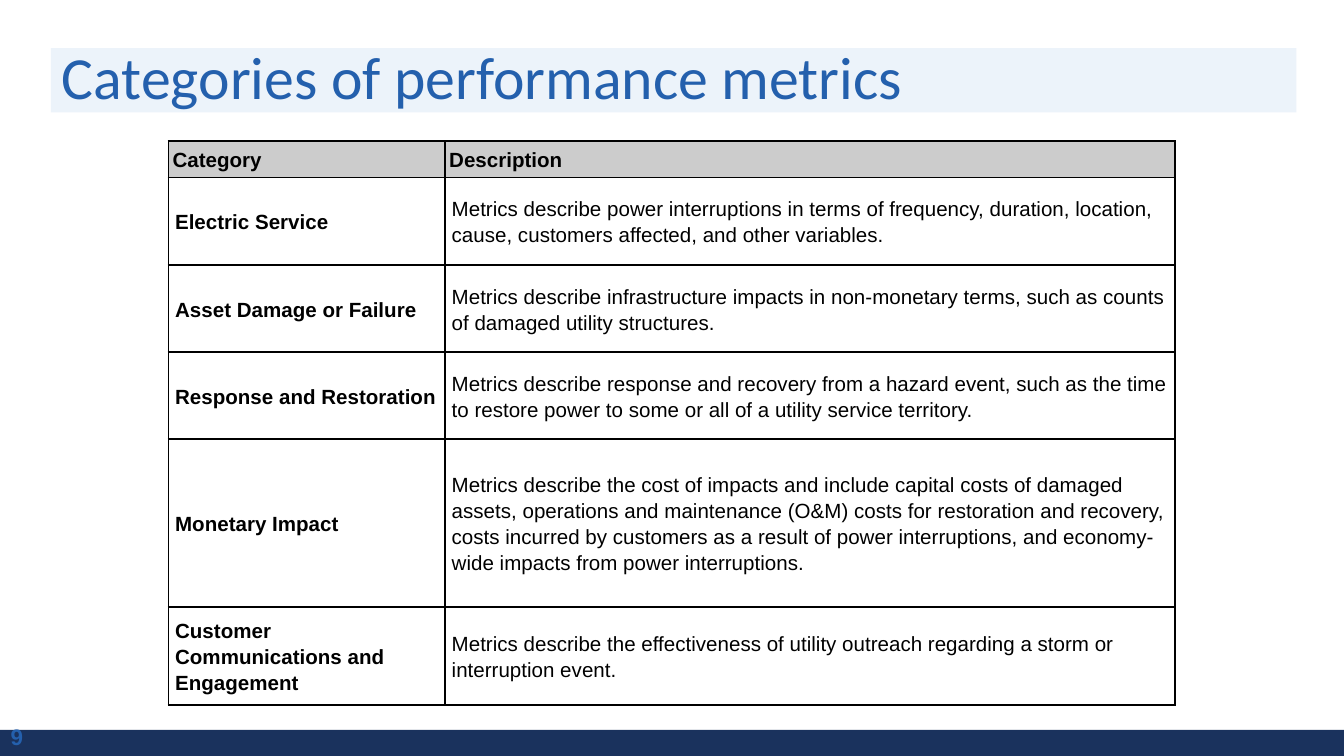
from lxml import etree
from pptx import Presentation
from pptx.dml.color import RGBColor
from pptx.enum.shapes import MSO_SHAPE
from pptx.enum.text import MSO_ANCHOR, PP_ALIGN
from pptx.oxml.ns import qn
from pptx.util import Pt

RECTANGLE = MSO_SHAPE.RECTANGLE
TOP, MIDDLE = MSO_ANCHOR.TOP, MSO_ANCHOR.MIDDLE
LEFT, RIGHT = PP_ALIGN.LEFT, PP_ALIGN.RIGHT

BLUE = RGBColor(0x24, 0x60, 0xAD)
NAVY = RGBColor(0x1A, 0x32, 0x5D)
PALE_BLUE = RGBColor(0xEC, 0xF3, 0xFA)
GREY = RGBColor(0xCC, 0xCC, 0xCC)
WHITE = RGBColor(0xFF, 0xFF, 0xFF)
BLACK = RGBColor(0, 0, 0)

SLIDE_WIDTH, SLIDE_HEIGHT = 720, 405
FOOTER_TOP = 391
COLUMN_WIDTHS = (148.2, 391.2)
ROW_HEIGHTS = (18.6, 46.7, 46.7, 46.7, 90, 46.8)

METRICS = [
    ("Category", "Description"),
    ("Electric Service",
     "Metrics describe power interruptions in terms of frequency, duration, "
     "location, cause, customers affected, and other variables."),
    ("Asset Damage or Failure",
     "Metrics describe infrastructure impacts in non-monetary terms, such as "
     "counts of damaged utility structures."),
    ("Response and Restoration",
     "Metrics describe response and recovery from a hazard event, such as the "
     "time to restore power to some or all of a utility service territory."),
    ("Monetary Impact",
     "Metrics describe the cost of impacts and include capital costs of damaged "
     "assets, operations and maintenance (O&M) costs for restoration and "
     "recovery, costs incurred by customers as a result of power interruptions, "
     "and economy-wide impacts from power interruptions."),
    ("Customer Communications and Engagement",
     "Metrics describe the effectiveness of utility outreach regarding a storm "
     "or interruption event."),
]


def add_band(slide, left, top, width, height, color):
    band = slide.shapes.add_shape(RECTANGLE, Pt(left), Pt(top), Pt(width), Pt(height))
    band.shadow.inherit = False
    band.fill.solid()
    band.fill.fore_color.rgb = color
    band.line.fill.background()


def style_paragraph(paragraph, font_name, size, color, bold, spacing, align=LEFT):
    paragraph.alignment = align
    paragraph.line_spacing = spacing
    font = paragraph.font
    font.name, font.size, font.bold = font_name, Pt(size), bold
    font.color.rgb = color


def add_label(slide, text, left, top, width, height, *style):
    label = slide.shapes.add_textbox(Pt(left), Pt(top), Pt(width), Pt(height))
    frame = label.text_frame
    frame.word_wrap = True
    frame.vertical_anchor = MIDDLE
    frame.margin_left = frame.margin_right = Pt(5.4)
    frame.margin_top = frame.margin_bottom = Pt(2.7)
    frame.text = text
    style_paragraph(frame.paragraphs[0], *style)


def add_borders(cell):
    properties = cell._tc.get_or_add_tcPr()
    for position, side in enumerate(("a:lnL", "a:lnR", "a:lnT", "a:lnB")):
        border = etree.Element(qn(side), w=str(Pt(1)))
        fill = etree.SubElement(border, qn("a:solidFill"))
        etree.SubElement(fill, qn("a:srgbClr"), val=str(BLACK))
        properties.insert(position, border)


def fill_cell(cell, text, is_header, is_category):
    cell.text = text
    inset = Pt(2.25 if is_header else 3.6)
    cell.margin_left = cell.margin_right = inset
    cell.margin_top = cell.margin_bottom = inset
    cell.vertical_anchor = TOP if is_header else MIDDLE
    cell.fill.solid()
    cell.fill.fore_color.rgb = GREY if is_header else WHITE
    style_paragraph(cell.text_frame.paragraphs[0], "Arial", 11, BLACK,
                    is_header or is_category, 1.14)
    add_borders(cell)


def add_metrics_table(slide, left, top):
    table = slide.shapes.add_table(
        len(METRICS), len(COLUMN_WIDTHS), Pt(left), Pt(top),
        Pt(sum(COLUMN_WIDTHS)), Pt(sum(ROW_HEIGHTS))).table
    for column, width in zip(table.columns, COLUMN_WIDTHS):
        column.width = Pt(width)
    for row, height in zip(table.rows, ROW_HEIGHTS):
        row.height = Pt(height)
    for row_number, texts in enumerate(METRICS):
        for column_number, text in enumerate(texts):
            fill_cell(table.cell(row_number, column_number), text,
                      row_number == 0, column_number == 0)


def main():
    deck = Presentation()
    deck.slide_width, deck.slide_height = Pt(SLIDE_WIDTH), Pt(SLIDE_HEIGHT)
    slide = deck.slides.add_slide(deck.slide_layouts[6])
    add_band(slide, 27.3, 25.8, 667.2, 34.4, PALE_BLUE)
    add_band(slide, 0, FOOTER_TOP, SLIDE_WIDTH, SLIDE_HEIGHT - FOOTER_TOP, NAVY)
    add_label(slide, "Categories of performance metrics", 27.8, 29.2, 648, 27.4,
              "Calibri", 32, BLUE, False, 0.9)
    add_label(slide, "9", -7, 384, 24.8, 21.6, "Arial", 12, BLUE, True, 1.0, RIGHT)
    add_metrics_table(slide, 90.2, 75.6)
    deck.save("out.pptx")


if __name__ == "__main__":
    main()
